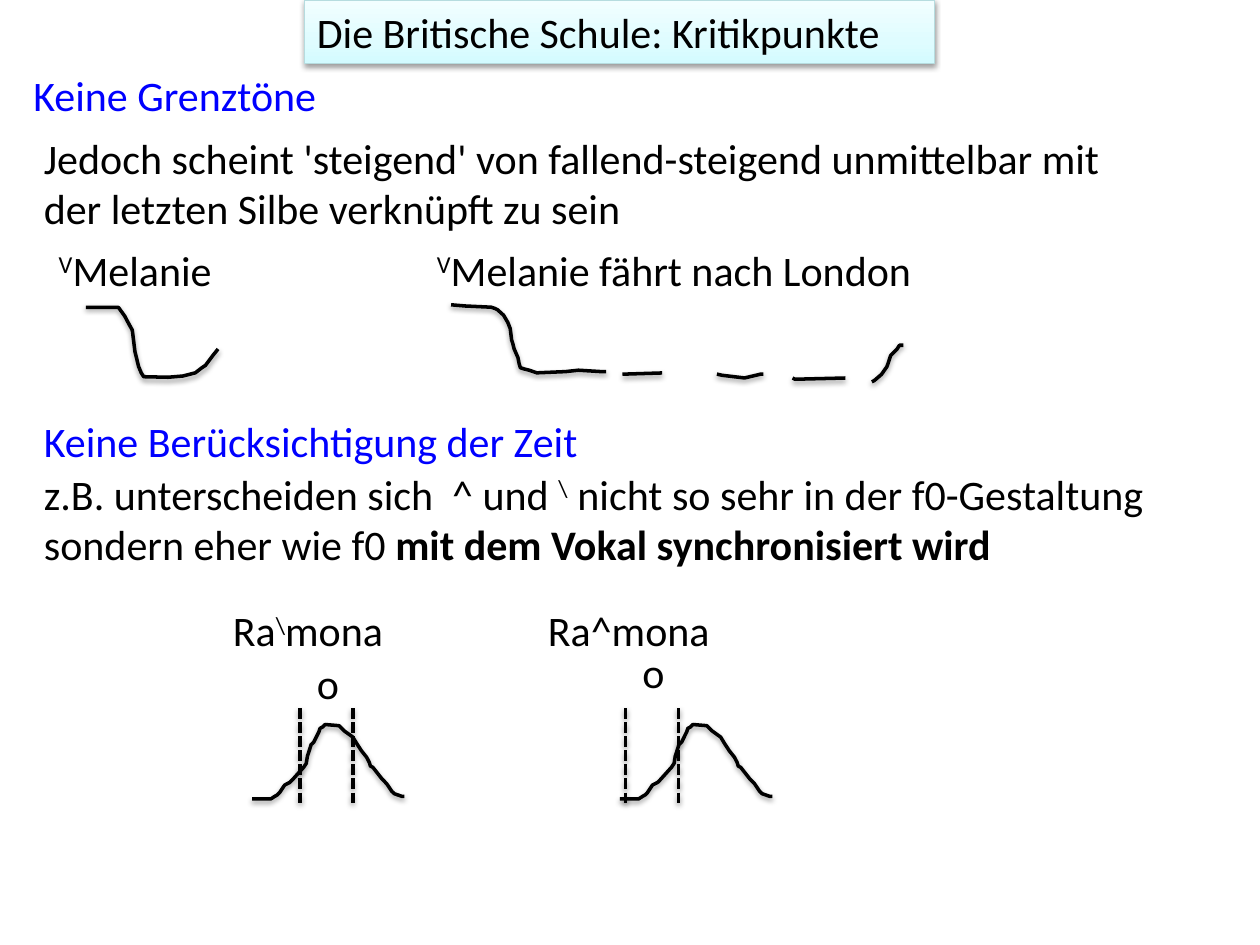
from copy import deepcopy
from dataclasses import dataclass

from lxml import etree
from pptx import Presentation
from pptx.dml.color import RGBColor
from pptx.enum.dml import MSO_LINE
from pptx.enum.shapes import MSO_CONNECTOR, MSO_SHAPE
from pptx.enum.text import MSO_AUTO_SIZE, PP_ALIGN
from pptx.oxml.ns import qn
from pptx.util import Pt

RECTANGLE = MSO_SHAPE.RECTANGLE
STRAIGHT = MSO_CONNECTOR.STRAIGHT
SHORT_DASH = MSO_LINE.SQUARE_DOT
GROW = MSO_AUTO_SIZE.SHAPE_TO_FIT_TEXT
LEFT = PP_ALIGN.LEFT


@dataclass(frozen=True)
class Theme:
    font: str = "Calibri"
    size: float = 24
    ink: RGBColor = RGBColor(0, 0, 0)
    heading: RGBColor = RGBColor(0, 0, 0xFF)
    title_border: RGBColor = RGBColor(0xB6, 0xDC, 0xDF)
    title_gradient: tuple = (
        (0, RGBColor(0xD3, 0xFB, 0xFF)),
        (0.35, RGBColor(0xDF, 0xFC, 0xFF)),
        (1, RGBColor(0xF2, 0xFE, 0xFF)),
    )
    border_width: float = 0.75
    stroke_width: float = 2


THEME = Theme()


@dataclass(frozen=True)
class Run:
    text: str
    raised: bool = False
    bold: bool = False


@dataclass(frozen=True)
class Label:
    left: float
    top: float
    width: float
    height: float
    runs: tuple[Run, ...]
    color: RGBColor = THEME.ink
    wrap: bool = True


@dataclass(frozen=True)
class Contour:
    """A pitch contour: its start, and later points as offsets from it."""
    x: float
    y: float
    offsets: tuple[tuple[float, float], ...]


LABELS = (
    Label(12, 36, 444, 36, (Run("Keine Grenztöne"),), THEME.heading),
    Label(18, 72, 654, 65.4, (
        Run("Jedoch scheint 'steigend' von fallend-steigend unmittelbar mit "
            "der letzten Silbe verknüpft zu sein"),)),
    Label(26.5, 136.2, 108, 36, (Run("V", raised=True), Run("Melanie"))),
    Label(242.5, 136.2, 372, 36,
          (Run("V", raised=True), Run("Melanie fährt nach London"))),
    Label(18, 234, 522, 36, (Run("Keine Berücksichtigung der Zeit"),), THEME.heading),
    Label(18, 264.2, 648, 65.4, (
        Run("z.B. unterscheiden sich  ^ und "),
        Run("\\", raised=True),
        Run(" nicht so sehr in der f0-Gestaltung sondern eher wie f0 "),
        Run("mit dem Vokal synchronisiert wird", bold=True))),
    Label(126, 342, 108, 36, (Run("Ra"), Run("\\", raised=True), Run("mona"))),
    Label(306, 342, 120, 36, (Run("Ra^mona"),)),
    Label(174, 372, 27.2, 36, (Run("o"),), wrap=False),
    Label(360, 366, 27.2, 36, (Run("o"),), wrap=False),
)

PEAK = (
    (10.8, 0), (13, -1.4), (14.4, -2.2), (15.8, -3.6), (18.7, -7.9), (21.6, -9.4),
    (23, -10.8), (29.5, -18), (31, -20.2), (31.7, -24.5), (32.4, -26.6), (33.8, -31),
    (35.3, -32.4), (38.2, -38.2), (38.9, -40.3), (40.3, -41), (41.8, -42.5),
    (49.7, -41.8), (52.6, -38.9), (57.6, -35.3), (59.8, -31.7), (62.6, -27.4),
    (65.5, -23.8), (67, -20.9), (67.7, -18.7), (69.1, -18), (74.2, -11.5), (77, -8.6),
    (79.9, -4.3), (81.4, -2.9), (85.7, -1.4), (87.1, -1.4),
)

CONTOURS = (
    Contour(49, 175.7, (
        (18.7, 0), (22.3, 5), (23.8, 7.9), (26.6, 13), (28.1, 25.2), (30.2, 33.8),
        (31.7, 37.4), (33.1, 39.6), (47.1, 39.9), (55.5, 39.2), (62.6, 37.4),
        (66.2, 34.6), (68.4, 33.1), (72.7, 27.4), (75.6, 23.8))),
    Contour(257.8, 174.2, (
        (7.9, 0.7), (23, 1.4), (25.2, 2.2), (26.6, 2.9), (30, 6), (32.4, 10.1),
        (33.8, 13.7), (34.6, 20.2), (35.3, 22.3), (36, 25.2), (38.2, 30.2),
        (38.9, 33.8), (39.6, 36), (41.8, 36.7), (44.6, 37.4), (49, 38.9),
        (65.5, 38.2), (72.7, 37.4), (85.7, 38.2), (88.6, 38.2))),
    Contour(355.7, 213.8, ((22.7, -0.7),)),
    Contour(409.7, 213.8, ((2.9, 0.7), (15.8, 2.2), (25.2, 0), (26.6, 0))),
    Contour(452.9, 216, ((1.4, 0.7), (30.2, 0))),
    Contour(498.2, 218.2, (
        (1.4, -0.7), (5.5, -4.2), (8.6, -8.6), (9.4, -10.8), (10.1, -13),
        (10.8, -15.1), (14.4, -18.7), (15.8, -20.9), (18, -20.9))),
    Contour(144, 456.5, PEAK),
    Contour(354.2, 456.5, PEAK),
)

VOWEL_STARTS = (171.4, 357.4)
VOWEL_LENGTH = 30.2
VOWEL_TOP, VOWEL_BOTTOM = 404.6, 458.6


def add_shadow(shape) -> None:
    """Give a shape or connector a soft shadow straight below it."""
    effects = etree.SubElement(shape._element.spPr, qn("a:effectLst"))
    shadow = etree.SubElement(
        effects, qn("a:outerShdw"), blurRad=str(Pt(3.1)), dist=str(Pt(1.6)),
        dir="5400000", rotWithShape="0")
    color = etree.SubElement(shadow, qn("a:srgbClr"), val=str(THEME.ink))
    etree.SubElement(color, qn("a:alpha"), val="38000")


def set_stroke(shape) -> None:
    shape.line.color.rgb = THEME.ink
    shape.line.width = Pt(THEME.stroke_width)


def write(frame, runs: tuple[Run, ...], color: RGBColor, wrap: bool = True) -> None:
    frame.word_wrap = wrap
    frame.auto_size = GROW
    paragraph = frame.paragraphs[0]
    paragraph.alignment = LEFT
    paragraph.font.name = THEME.font
    paragraph.font.size = Pt(THEME.size)
    paragraph.font.color.rgb = color
    for part in runs:
        run = paragraph.add_run()
        run.text = part.text
        if part.bold:
            run.font.bold = True
        if part.raised:
            run._r.get_or_add_rPr().set("baseline", "30000")


def draw_title(shapes, text: str) -> None:
    title = shapes.add_shape(RECTANGLE, Pt(174), Pt(0), Pt(360), Pt(36.4))
    title.fill.gradient()
    title.fill.gradient_angle = 90
    first_stop = title._element.spPr.find(".//" + qn("a:gs"))
    first_stop.addnext(deepcopy(first_stop))
    for stop, (position, color) in zip(title.fill.gradient_stops, THEME.title_gradient):
        stop.position = position
        stop.color.rgb = color
    title.line.color.rgb = THEME.title_border
    title.line.width = Pt(THEME.border_width)
    add_shadow(title)
    write(title.text_frame, (Run(text),), THEME.ink)


def draw_label(shapes, label: Label) -> None:
    box = shapes.add_textbox(
        Pt(label.left), Pt(label.top), Pt(label.width), Pt(label.height))
    write(box.text_frame, label.runs, label.color, label.wrap)


def draw_contour(shapes, contour: Contour) -> None:
    builder = shapes.build_freeform(Pt(contour.x), Pt(contour.y))
    builder.add_line_segments(
        [(Pt(contour.x + dx), Pt(contour.y + dy)) for dx, dy in contour.offsets],
        close=False)
    curve = builder.convert_to_shape()
    curve.fill.background()
    set_stroke(curve)
    add_shadow(curve)


def draw_vowel_edge(shapes, x: float) -> None:
    edge = shapes.add_connector(STRAIGHT, Pt(x), Pt(VOWEL_TOP), Pt(x), Pt(VOWEL_BOTTOM))
    set_stroke(edge)
    edge.line.dash_style = SHORT_DASH
    add_shadow(edge)


def main() -> None:
    deck = Presentation()
    deck.slide_width, deck.slide_height = Pt(720), Pt(540)
    shapes = deck.slides.add_slide(deck.slide_layouts[6]).shapes
    draw_title(shapes, "Die Britische Schule: Kritikpunkte")
    for label in LABELS:
        draw_label(shapes, label)
    for start in VOWEL_STARTS:
        for x in (start, start + VOWEL_LENGTH):
            draw_vowel_edge(shapes, x)
    for contour in CONTOURS:
        draw_contour(shapes, contour)
    deck.save("out.pptx")


if __name__ == "__main__":
    main()
